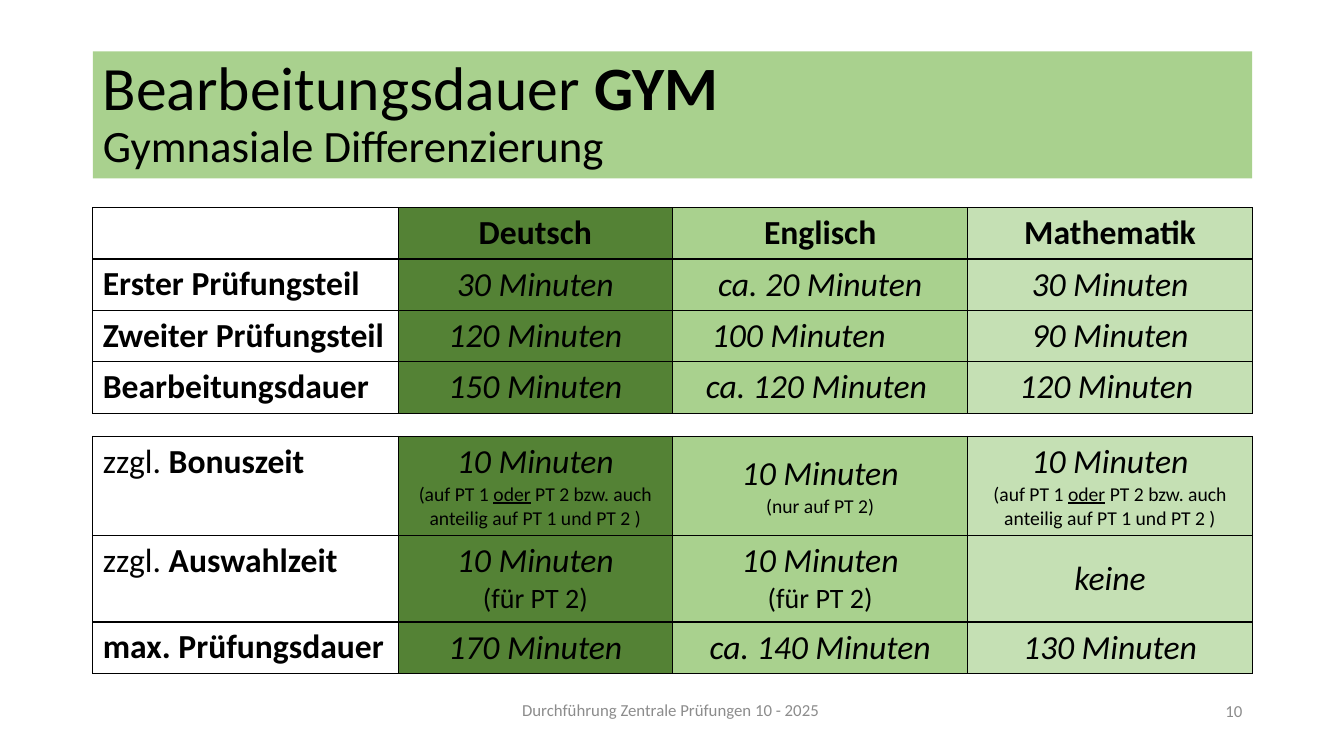
from pptx import Presentation
from pptx import util as u
from pptx.dml.color import RGBColor
from pptx.enum import text
from pptx.oxml import parse_xml
from pptx.oxml.ns import nsdecls

COLOURS = {"ink": "000000", "grey": "8C8C8C", "title": "A9D18E",
           "Deutsch": "548235", "Englisch": "A9D18E", "Mathematik": "C5E0B4"}
SUBJECTS = ["Deutsch", "Englisch", "Mathematik"]
FONT = "Calibri"
LEFT, WIDTH = 0.92, 11.5
COLUMNS = [3.03, 2.72, 2.93, 2.82]
ROW = 0.51
CENTRE = text.PP_ALIGN.CENTER
MIDDLE = text.MSO_ANCHOR.MIDDLE


def colour(name):
    return RGBColor.from_string(COLOURS[name])


def add_run(paragraph, words, size=24, style="", ink="ink"):
    """Style letters: b bold, i italic, u underlined."""
    run = paragraph.add_run()
    run.text = words
    font = run.font
    font.name, font.size = FONT, u.Pt(size)
    font.bold, font.italic, font.underline = (s in style for s in "biu")
    font.color.rgb = colour(ink)


# Cell contents: a list of paragraphs, each a list of runs
def label(bold, plain=""):
    return [[(plain, 24, "")] * bool(plain) + [(bold, 24, "b")]]


def duration(words, *note):
    return [[(words, 24, "i")]] + [list(note)] * bool(note)


def add_title(slide):
    title = slide.shapes.title
    title.left, title.top = u.Inches(LEFT), u.Inches(0.51)
    title.width, title.height = u.Inches(WIDTH), u.Inches(1.26)
    title.fill.solid()
    title.fill.fore_color.rgb = colour("title")
    frame = title.text_frame
    frame.auto_size = text.MSO_AUTO_SIZE.NONE
    frame.vertical_anchor = MIDDLE
    heading = frame.paragraphs[0]
    heading.alignment = text.PP_ALIGN.LEFT
    heading.line_spacing = 0.9
    add_run(heading, "Bearbeitungsdauer ", 44)
    add_run(heading, "GYM", 44, "b")
    heading.add_line_break()
    add_run(heading, "Gymnasiale Differenzierung", 32)


def add_footer(slide, words, box, align, wrap):
    frame = slide.shapes.add_textbox(*map(u.Inches, box)).text_frame
    frame.word_wrap = wrap
    frame.vertical_anchor = MIDDLE
    frame.paragraphs[0].alignment = align
    add_run(frame.paragraphs[0], words, 12, ink="grey")


def add_borders(cell):
    properties = cell._tc.get_or_add_tcPr()
    for side in "LRTB":
        properties.append(parse_xml(
            f'<a:ln{side} {nsdecls("a")} w="12700"><a:solidFill>'
            f'<a:srgbClr val="{COLOURS["ink"]}"/></a:solidFill></a:ln{side}>'))


def fill_cell(cell, paragraphs, subject, anchor):
    add_borders(cell)
    if subject:
        cell.fill.solid()
        cell.fill.fore_color.rgb = colour(subject)
        cell.vertical_anchor = anchor
    else:
        cell.fill.background()
    for index, runs in enumerate(paragraphs):
        frame = cell.text_frame
        paragraph = frame.add_paragraph() if index else frame.paragraphs[0]
        paragraph.alignment = CENTRE if subject else text.PP_ALIGN.LEFT
        for run in runs:
            add_run(paragraph, *run)


def add_times(slide, top, heights, rows, header=False):
    table = slide.shapes.add_table(
        len(rows), len(COLUMNS), u.Inches(LEFT), u.Inches(top),
        u.Inches(WIDTH), u.Inches(sum(heights))).table
    table.first_row = table.horz_banding = False
    for column, width in zip(table.columns, COLUMNS):
        column.width = u.Inches(width)
    for r, (height, contents) in enumerate(zip(heights, rows)):
        table.rows[r].height = u.Inches(height)
        anchor = text.MSO_ANCHOR.TOP if header and r == 0 else MIDDLE
        for c, (subject, content) in enumerate(zip([None] + SUBJECTS, contents)):
            fill_cell(table.cell(r, c), content, subject, anchor)
    return table


def main():
    deck = Presentation()
    deck.slide_width, deck.slide_height = u.Inches(13.33), u.Inches(7.5)
    slide = deck.slides.add_slide(deck.slide_layouts[5])
    add_title(slide)

    # Working time per exam part
    working_time = add_times(slide, 2.06, [ROW] * 4, [
        [[]] + [label(subject) for subject in SUBJECTS],
        [label("Erster Prüfungsteil"), duration("30 Minuten"),
         duration("ca. 20 Minuten"), duration("30 Minuten")],
        [label("Zweiter Prüfungsteil"), duration("120 Minuten"),
         duration("100 Minuten"), duration("90 Minuten")],
        [label("Bearbeitungsdauer"), duration("150 Minuten"),
         duration("ca. 120 Minuten "), duration("120 Minuten ")],
    ], header=True)
    # The English second part is indented rather than centred
    english_part = working_time.cell(2, 2).text_frame.paragraphs[0]
    english_part.alignment = text.PP_ALIGN.LEFT
    english_part._p.get_or_add_pPr().set("marL", str(u.Inches(0.29)))

    # Additional time and maximum
    shared_bonus = duration("10 Minuten", ("(auf PT 1 ", 14), ("oder", 14, "u"),
                            (" PT 2 bzw. auch anteilig auf PT 1 und PT 2 )", 14))
    selection = duration("10 Minuten", ("(für PT 2)", 20))
    add_times(slide, 4.33, [0.97, 0.86, ROW], [
        [label("Bonuszeit", "zzgl. "), shared_bonus,
         duration("10 Minuten", ("(nur auf PT 2)", 14)), shared_bonus],
        [label(" Auswahlzeit", "zzgl."), selection, selection, duration("keine")],
        [label("max. Prüfungsdauer"), duration("170 Minuten"),
         duration("ca. 140 Minuten"), duration("130 Minuten")],
    ])

    # Footer and page number
    add_footer(slide, "Durchführung Zentrale Prüfungen 10 - 2025",
               (5.08, 6.89, 3.17, 0.3), text.PP_ALIGN.LEFT, False)
    add_footer(slide, "10", (9.42, 6.85, 3, 0.4), text.PP_ALIGN.RIGHT, True)
    deck.save("out.pptx")


if __name__ == "__main__":
    main()
